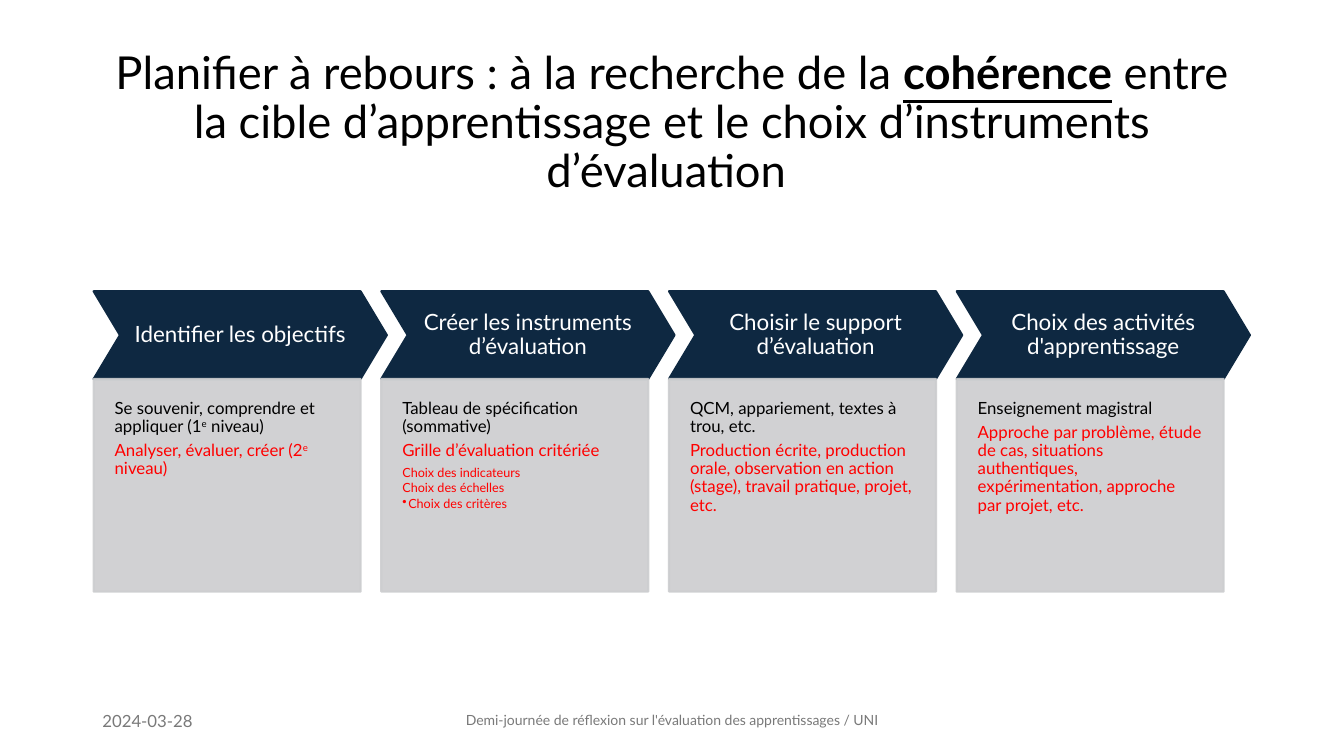
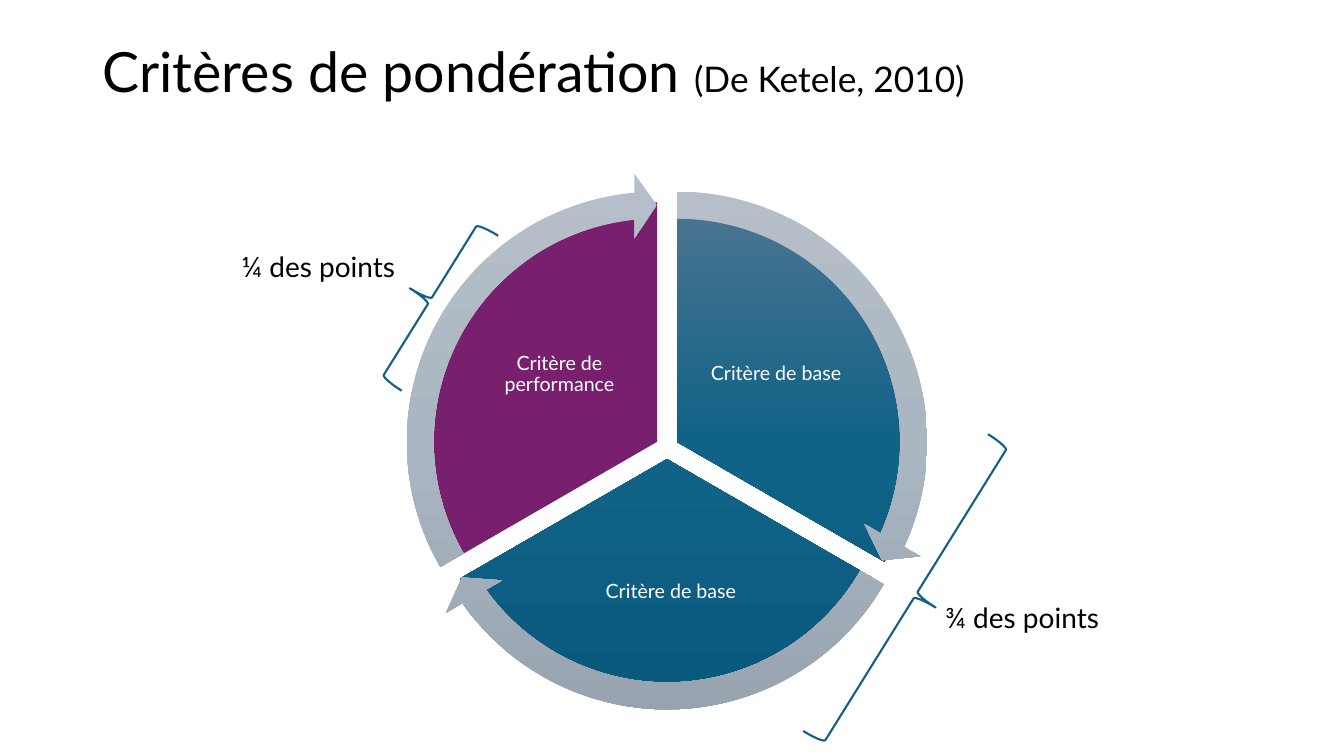
import copy
import math

import lxml.etree
import pptx
import pptx.util
import pptx.dml.color
import pptx.enum.shapes
import pptx.enum.text
import pptx.oxml.ns

Cm = pptx.util.Cm
Pt = pptx.util.Pt
RGBColor = pptx.dml.color.RGBColor
SHAPE = pptx.enum.shapes.MSO_SHAPE
ALIGN = pptx.enum.text.PP_ALIGN
ANCHOR = pptx.enum.text.MSO_ANCHOR
qn = pptx.oxml.ns.qn

FONT = "Lato"
BLACK = RGBColor(0x00, 0x00, 0x00)
WHITE = RGBColor(0xFF, 0xFF, 0xFF)
RED = RGBColor(0xFF, 0x00, 0x00)
GREY = RGBColor(0x79, 0x79, 0x79)
NAVY = RGBColor(0x0E, 0x28, 0x41)
PANEL = RGBColor(0xCC, 0xCD, 0xCF)
PURPLE = RGBColor(0x78, 0x20, 0x6E)
TEAL = RGBColor(0x15, 0x60, 0x82)
BLUE_SHADES = [RGBColor(0x4C, 0x75, 0x91), RGBColor(0x10, 0x62, 0x87), RGBColor(0x09, 0x59, 0x7D)]
STEEL_SHADES = [RGBColor(0xB6, 0xBF, 0xC9), RGBColor(0xAA, 0xB7, 0xC2), RGBColor(0x96, 0xA2, 0xAE)]

MARGIN_LEFT, TITLE_WIDTH = 2.33, 29.21
ANGLE_UNIT = 0.6

STEPS = [
    ("Identifier les objectifs",
     ["Se souvenir, comprendre et appliquer (1", ("e", "super"), " niveau)"],
     ["Analyser, évaluer, créer (2", ("e", "super"), " niveau)"], []),
    ("Créer les instruments d’évaluation",
     ["Tableau de spécification (sommative)"],
     ["Grille d’évaluation critériée"],
     [("Choix des indicateurs", False), ("Choix des échelles", False), ("Choix des critères", True)]),
    ("Choisir le support d’évaluation",
     ["QCM, appariement, textes à trou, etc."],
     ["Production écrite, production orale, observation en action (stage), travail pratique, projet, etc."], []),
    ("Choix des activités d'apprentissage",
     ["Enseignement magistral"],
     ["Approche par problème, étude de cas, situations authentiques, expérimentation, "
      "approche par projet, etc."], []),
]

SECTORS = [
    ("Critère de base", BLUE_SHADES, (2.75, -1.84, 4.32, 3.58)),
    ("Critère de base", BLUE_SHADES, (0.1, 3.65, 6.48, 3.15)),
    ("Critère de performance", [PURPLE], (-2.71, -1.84, 4.32, 3.58)),
]


def write_line(para, pieces, size, color, align=ALIGN.LEFT, spacing=0.9, after=0):
    """Write pieces, each a string or a (string, style) pair, into a paragraph."""
    para.alignment, para.line_spacing, para.space_after = align, spacing, Pt(after)
    for piece in pieces:
        text, style = (piece, "") if isinstance(piece, str) else piece
        span = para.add_run()
        span.text = text
        span.font.name, span.font.size = FONT, Pt(size)
        span.font.color.rgb = color
        if style == "strong":
            span.font.bold = span.font.underline = True
        elif style == "super":
            span.font._element.set("baseline", "30000")
        elif style == "small":
            span.font.size = Pt(25.2)


def prepare_frame(shape, insets, anchor=ANCHOR.MIDDLE):
    """Set wrapping, anchor and insets in cm, then return the text frame."""
    frame = shape.text_frame
    frame.word_wrap, frame.vertical_anchor = True, anchor
    frame.margin_left, frame.margin_top, frame.margin_right, frame.margin_bottom = map(Cm, insets)
    return frame


def add_label(page, box, pieces, size, color=BLACK, insets=(0.25, 0.13, 0.25, 0.13), **layout):
    """Add a text box holding one paragraph."""
    shape = page.shapes.add_textbox(*map(Cm, box))
    write_line(prepare_frame(shape, insets).paragraphs[0], pieces, size, color, **layout)


def add_title(page, top, height, pieces, size, align=ALIGN.LEFT):
    """Add the slide title across the shared title column."""
    add_label(page, (MARGIN_LEFT, top, TITLE_WIDTH, height), pieces, size, align=align)


def add_footer(page):
    """Add the date and the event name at the bottom."""
    add_label(page, (MARGIN_LEFT, 17.65, 7.62, 1.02), ["2024-03-28"], 12, GREY, spacing=1, after=6)
    add_label(page, (11.22, 17.65, 11.43, 1.02),
              ["Demi-journée de réflexion sur l'évaluation des apprentissages / UNI"],
              10, GREY, align=ALIGN.CENTER, after=6)


def add_figure(page, kind, box, shades, line=None):
    """Add a preset shape with no fill, a plain fill or a downward gradient."""
    shape = page.shapes.add_shape(kind, *map(Cm, box))
    shape.shadow.inherit = False
    if not shades:
        shape.fill.background()
    elif len(shades) == 1:
        shape.fill.solid()
        shape.fill.fore_color.rgb = shades[0]
    else:
        shape.fill.gradient()
        shape.fill.gradient_angle = 270
        stops = next(shape.element.spPr.iter(qn("a:gsLst")))
        stops.insert(1, copy.deepcopy(stops[0]))
        for index, (stop, shade) in enumerate(zip(shape.fill.gradient_stops, shades)):
            stop.position = index / (len(shades) - 1)
            stop.color.rgb = shade
    if line is None:
        shape.line.fill.background()
    else:
        shape.line.color.rgb = line
        shape.line.width = Pt(1.5)
    return shape


def set_bullet(para, shown):
    """Give a paragraph a hanging indent, with or without a bullet."""
    props = para._p.get_or_add_pPr()
    props.set("marL", str(Cm(0.15)))
    props.set("indent", str(-Cm(0.15)))
    if shown:
        lxml.etree.SubElement(props, qn("a:buChar"), char="•")
    else:
        lxml.etree.SubElement(props, qn("a:buNone"))


def add_step(page, left, top, step):
    """Add a chevron heading and the panel of details below it."""
    heading, basic, advanced, details = step
    head_height = 2.21
    chevron = add_figure(page, SHAPE.CHEVRON, (left, top, 7.39, head_height), [NAVY], NAVY)
    chevron.adjustments[0] = 0.3
    frame = prepare_frame(chevron, [0.28] * 4)
    write_line(frame.paragraphs[0], [heading], 16, WHITE, ALIGN.CENTER)

    panel = add_figure(page, SHAPE.RECTANGLE, (left, top + head_height, 6.73, 5.36), [PANEL], PANEL)
    for color in list(panel.element.spPr.iter(qn("a:srgbClr"))):
        lxml.etree.SubElement(color, qn("a:alpha"), val="90000")
    frame = prepare_frame(panel, (0.53, 0.53, 0.53, 1.07), ANCHOR.TOP)
    write_line(frame.paragraphs[0], basic, 12, BLACK, after=4.2)
    write_line(frame.add_paragraph(), advanced, 12, RED, after=4.2)
    for text, bulleted in details:
        para = frame.add_paragraph()
        write_line(para, [text], 9, RED, after=1.35)
        set_bullet(para, bulleted)


def add_wheel(page, hub_x, hub_y):
    """Add three spread sectors, their labels and the arrows around them."""
    pie_size, ring_size, spread, head_angle = 12.07, 13.56, 0.29, 3.28
    rings = []
    for index, (text, shades, (dx, dy, width, height)) in enumerate(SECTORS):
        middle = math.radians(120 * index - 30)
        x, y = hub_x + spread * math.cos(middle), hub_y + spread * math.sin(middle)
        start, end = ((270 + 120 * turn) % 360 * ANGLE_UNIT for turn in (index, index + 1))
        pie = add_figure(page, SHAPE.PIE, (x - pie_size / 2, y - pie_size / 2, pie_size, pie_size), shades)
        pie.adjustments[0], pie.adjustments[1] = start, end
        add_label(page, (hub_x + dx - width / 2, hub_y + dy - height / 2, width, height),
                  [text], 14, WHITE, insets=[0.05] * 4, align=ALIGN.CENTER)
        rings.append((x - ring_size / 2, y - ring_size / 2, start, end))
    for left, top, start, end in rings:
        arrow = add_figure(page, SHAPE.CIRCULAR_ARROW, (left, top, ring_size, ring_size), STEEL_SHADES)
        for index, value in enumerate((0.05, head_angle, end - head_angle, start, 0.06)):
            arrow.adjustments[index] = value


def add_share(page, brace_box, rotation, label_left, label_top, text):
    """Add a rotated brace and the share of points it stands for."""
    brace = add_figure(page, SHAPE.LEFT_BRACE, brace_box, [], TEAL)
    brace.rotation = rotation
    add_label(page, (label_left, label_top, 4.52, 1.12), [text], 20, spacing=1)


def build_planning(page):
    """Build the slide on backward planning."""
    add_title(page, 1.55, 3.15,
              ["Planifier à rebours : à la recherche de la ", ("cohérence", "strong"),
               " entre la cible d’apprentissage et le choix d’instruments d’évaluation "],
              32.4, ALIGN.CENTER)
    add_footer(page)
    for index, step in enumerate(STEPS):
        add_step(page, 2.36 + 7.25 * index, 7.34, step)


def build_weighting(page):
    """Build the slide on weighting criteria."""
    add_title(page, 1.02, 1.73, ["Critères de pondération ", ("(De Ketele, 2010)", "small")], 39.6)
    add_wheel(page, 16.81, 11.28)
    add_share(page, (10.24, 5.28, 1.19, 4.6), 31.9, 5.84, 6.15, "¼ des points")
    add_share(page, (22.48, 10.59, 1.19, 8.81), 211.9, 23.57, 14.99, "¾ des points")


def main():
    """Build the deck and save it."""
    deck = pptx.Presentation()
    deck.slide_width, deck.slide_height = Cm(33.87), Cm(19.05)
    for build in (build_planning, build_weighting):
        build(deck.slides.add_slide(deck.slide_layouts[6]))
    deck.save("out.pptx")


if __name__ == "__main__":
    main()
